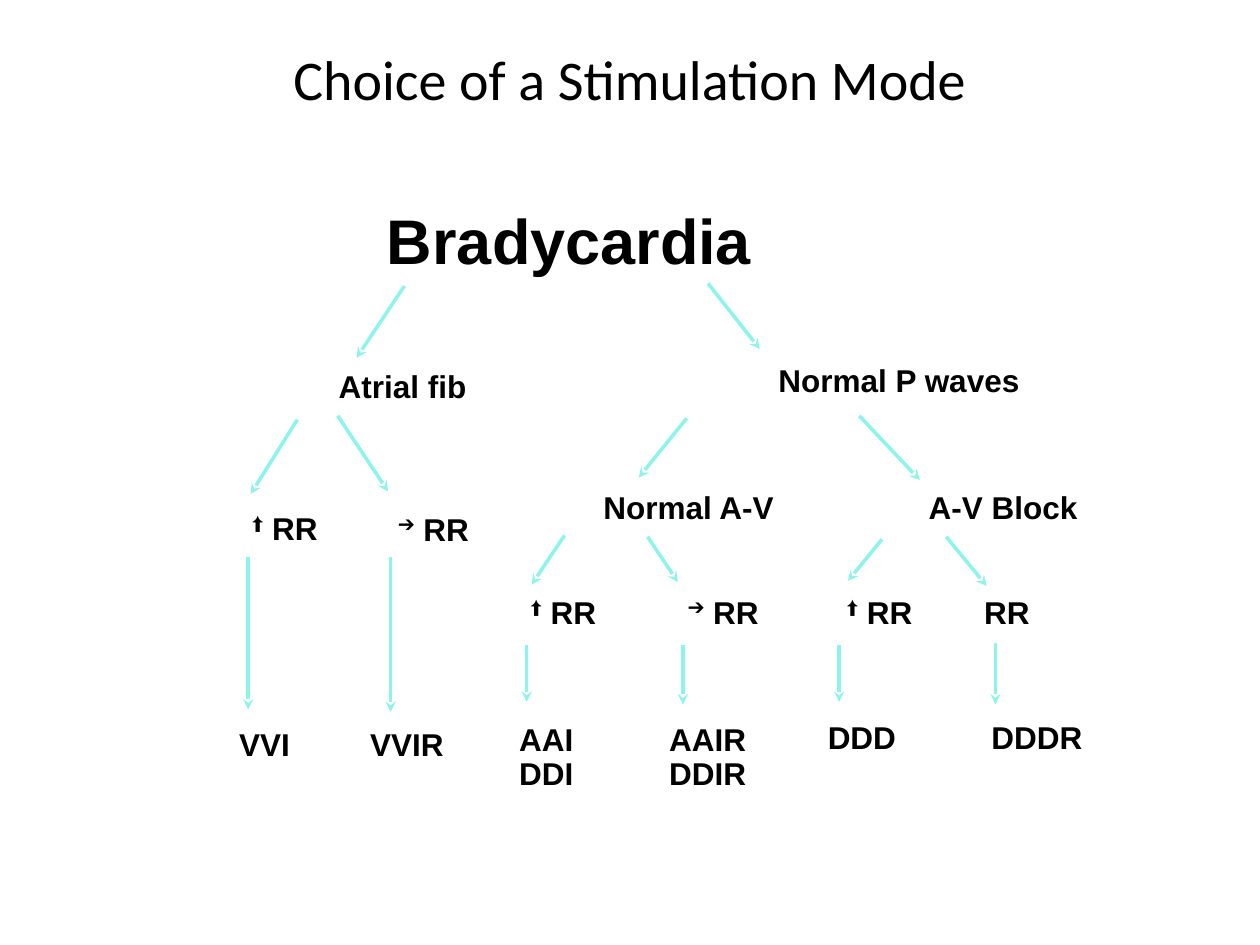
from collections import namedtuple
from dataclasses import dataclass

from lxml import etree
from pptx import Presentation
from pptx.dml.color import RGBColor
from pptx.enum.shapes import MSO_CONNECTOR
from pptx.enum.text import MSO_ANCHOR, MSO_AUTO_SIZE, PP_ALIGN
from pptx.oxml.ns import qn
from pptx.util import Inches, Pt

STRAIGHT = MSO_CONNECTOR.STRAIGHT
TOP, MIDDLE = MSO_ANCHOR.TOP, MSO_ANCHOR.MIDDLE
CENTER, RIGHT = PP_ALIGN.CENTER, PP_ALIGN.RIGHT
GROW = MSO_AUTO_SIZE.SHAPE_TO_FIT_TEXT

Box = namedtuple("Box", "left top width height")
Outcome = namedtuple("Outcome", "box rate marker rate_box arrow mode mode_box")


@dataclass(frozen=True)
class Theme:
    ink: RGBColor = RGBColor(0x00, 0x00, 0x00)
    arrow: RGBColor = RGBColor(0x8C, 0xF4, 0xEA)
    title_font: str = "Calibri"
    body_font: str = "Arial"
    title_size: int = 32
    heading_size: int = 36
    label_size: int = 18
    arrow_width: int = 2


THEME = Theme()
LINE = 0.37
UP, LEVEL = "⬆", "➔"


def inside(box, part):
    return Box(box.left + part.left, box.top + part.top, part.width, part.height)


def add_span(para, text, font, size, bold):
    span = para.add_run()
    span.text = text
    span.font.name = font
    span.font.size = Pt(size)
    span.font.bold = bold
    span.font.color.rgb = THEME.ink
    return span


def add_text(page, box, text, size=THEME.label_size, font=THEME.body_font, bold=True,
             align=RIGHT, anchor=TOP, rtl=True, wrap=False, inset=(0.1, 0.05),
             spacing=0.9, marker=None):
    frame = page.shapes.add_textbox(*map(Inches, box)).text_frame
    frame.word_wrap = wrap
    frame.auto_size = GROW
    frame.vertical_anchor = anchor
    frame.margin_left = frame.margin_right = Inches(inset[0])
    frame.margin_top = frame.margin_bottom = Inches(inset[1])
    for index, line in enumerate(text.split("\n")):
        para = frame.add_paragraph() if index else frame.paragraphs[0]
        para.alignment = align
        para.line_spacing = spacing
        if rtl:
            para._p.get_or_add_pPr().set("rtl", "1")
        add_span(para, line, font, size, bold)
        if marker:
            span = add_span(para, marker, font, size, False)
            span._r.get_or_add_rPr().set("baseline", "30000")


def add_arrow(page, box, start, end):
    points = [Inches(origin + offset) for point in (start, end)
              for origin, offset in zip(box[:2], point)]
    arrow = page.shapes.add_connector(STRAIGHT, *points)
    arrow.line.color.rgb = THEME.arrow
    arrow.line.width = Pt(THEME.arrow_width)
    etree.SubElement(arrow.line._get_or_add_ln(), qn("a:tailEnd"), type="stealth")
    etree.SubElement(arrow._element.spPr, qn("a:effectLst"))


def add_title(page, box):
    add_text(page, box, "Choice of a Stimulation Mode", size=THEME.title_size,
             font=THEME.title_font, bold=False, align=CENTER, anchor=MIDDLE,
             rtl=False, wrap=True, inset=(0.05, 0.02), spacing=1.0)


def add_split(page, box, label, label_box, arrows, size=THEME.label_size):
    add_text(page, inside(box, label_box), label, size=size)
    for start, end in arrows:
        add_arrow(page, box, start, end)


def add_outcome(page, outcome):
    box = outcome.box
    anchor = MIDDLE if outcome.mode == "VVI" else TOP
    add_text(page, inside(box, outcome.rate_box), outcome.rate,
             marker=outcome.marker, anchor=anchor)
    x, start, end = outcome.arrow
    add_arrow(page, box, (x, start), (x, end))
    add_text(page, inside(box, outcome.mode_box), outcome.mode)


SPLITS = [
    (Box(2.8, 1.62, 3.3, 1.25), "Bradycardia", Box(0.14, 0, 3.12, 0.65),
     [((0.41, 0.65), (0.03, 1.22)), ((2.82, 0.63), (3.23, 1.15))], THEME.heading_size),
    (Box(1.95, 2.9, 1.85, 1.05), "Atrial fib", Box(0.62, 0, 1.23, LINE),
     [((0.41, 0.43), (0.04, 1.02)), ((0.73, 0.4), (1.13, 1.0))], THEME.label_size),
    (Box(5.05, 2.85, 3.15, 1.0), "Normal P waves", Box(1.01, 0, 2.13, LINE),
     [((0.4, 0.47), (0.02, 0.94)), ((1.77, 0.45), (2.25, 0.96))], THEME.label_size),
    (Box(4.2, 3.86, 2.05, 0.8), "Normal A-V", Box(0.47, 0, 1.57, LINE),
     [((0.28, 0.39), (0.02, 0.78)), ((0.94, 0.4), (1.18, 0.76))], THEME.label_size),
    (Box(6.7, 3.86, 1.95, 0.8), "A-V Block", Box(0.55, 0, 1.4, LINE),
     [((0.3, 0.42), (0.03, 0.75)), ((0.81, 0.4), (1.13, 0.79))], THEME.label_size),
]

OUTCOMES = [
    Outcome(Box(1.79, 4.02, 0.83, 2.09), "RR ", UP, Box(0.04, 0, 0.79, LINE),
            (0.18, 0.4, 1.61), "VVI", Box(0, 1.72, 0.61, LINE)),
    Outcome(Box(2.83, 4.02, 0.99, 2.09), "RR ", LEVEL, Box(0.17, 0.01, 0.82, LINE),
            (0.27, 0.4, 1.63), "VVIR", Box(0, 1.72, 0.79, LINE)),
    Outcome(Box(4.01, 4.69, 0.82, 1.66), "RR ", UP, Box(0.03, 0, 0.79, LINE),
            (0.17, 0.43, 0.88), "AAI\nDDI", Box(0, 1.01, 0.64, 0.65)),
    Outcome(Box(5.2, 4.69, 0.92, 1.66), "RR ", LEVEL, Box(0.1, 0, 0.82, LINE),
            (0.22, 0.43, 0.9), "AAIR\nDDIR", Box(0, 1.01, 0.82, 0.65)),
    Outcome(Box(6.46, 4.69, 0.88, 1.36), "RR ", UP, Box(0.09, 0, 0.79, LINE),
            (0.2, 0.43, 0.88), "DDD", Box(0, 0.99, 0.75, LINE)),
    Outcome(Box(7.7, 4.69, 0.99, 1.36), "RR", None, Box(0, 0, 0.57, LINE),
            (0.2, 0.41, 0.9), "DDDR", Box(0.06, 0.99, 0.93, LINE)),
]


def main():
    deck = Presentation()
    deck.slide_width, deck.slide_height = Inches(10), Inches(7.5)
    page = deck.slides.add_slide(deck.slide_layouts[6])
    add_title(page, Box(0, 0.33, 10, 0.58))
    for split in SPLITS:
        add_split(page, *split)
    for outcome in OUTCOMES:
        add_outcome(page, outcome)
    deck.save("out.pptx")


if __name__ == "__main__":
    main()
